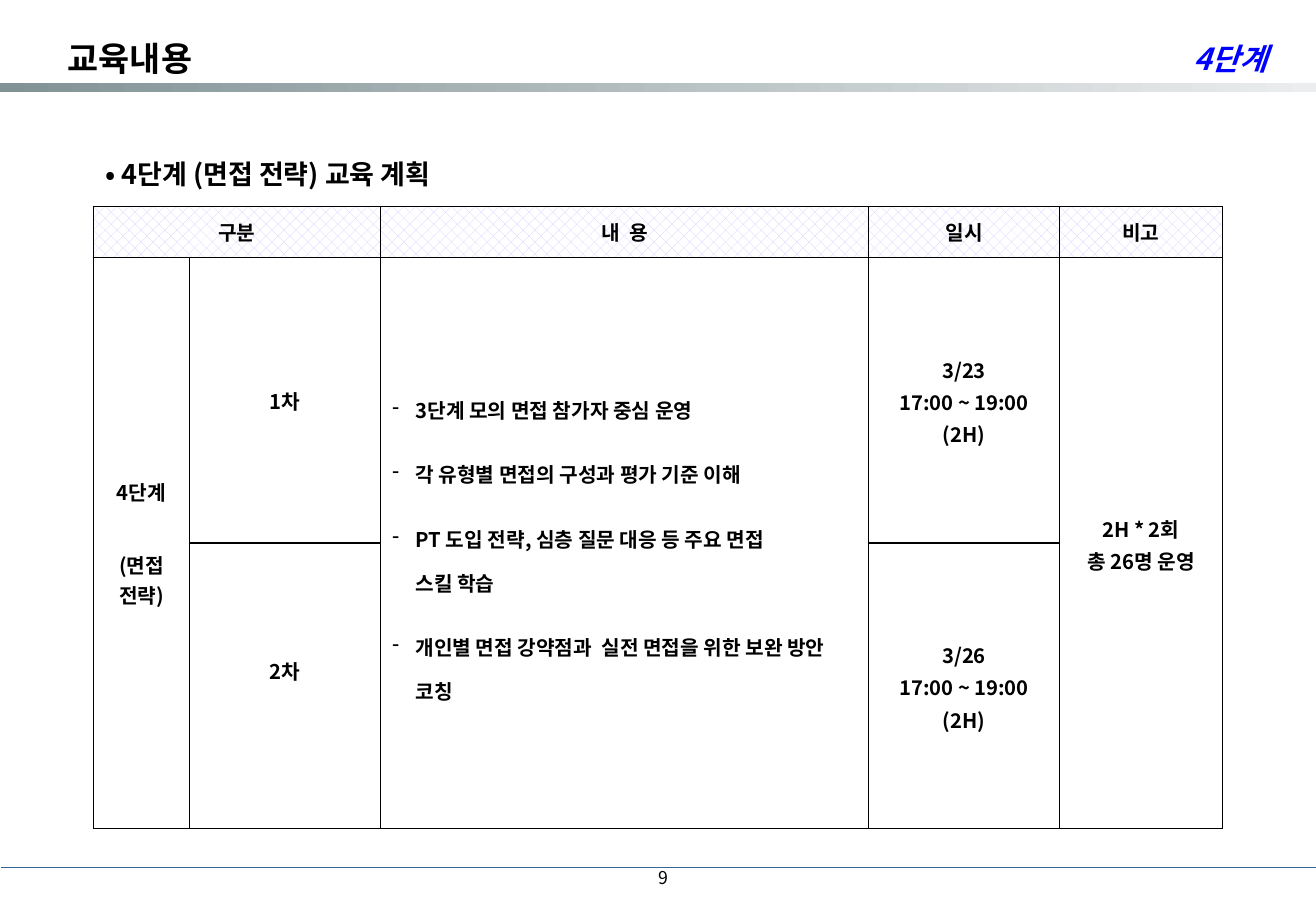
import pptx
import pptx.util
import pptx.dml.color
import pptx.enum.dml
import pptx.enum.shapes
import pptx.enum.text
import pptx.oxml
import pptx.oxml.ns
from dataclasses import dataclass

Inches, Pt = pptx.util.Inches, pptx.util.Pt
ALIGN = pptx.enum.text.PP_ALIGN
MIDDLE = pptx.enum.text.MSO_ANCHOR.MIDDLE


@dataclass(frozen=True)
class Theme:
    font: str = "Noto Sans CJK KR"
    black: str = "000000"
    white: str = "FFFFFF"
    blue: str = "0000FF"
    rule: str = "336699"
    header: str = "CCCCFF"
    bar: tuple = ("819295", "EBEDEE")
    title: float = 20
    stage: float = 18
    heading: float = 16
    body: float = 12
    number: float = 10.5


T = Theme()
SIZE = (10.83, 7.5)
TITLE, STAGE, PAGE = "교육내용", "4단계", "9"
HEADING = "• 4단계 (면접 전략) 교육 계획"
COLS = [0.79, 1.57, 4.02, 1.57, 1.34]
ROWS = [0.42, 2.35, 2.35]
TABLE_AT = (0.77, 1.7)
HEADERS = {0: "구분", 2: "내  용", 3: "일시", 4: "비고"}
STAGE_CELL = "4단계\n\n(면접\n전략)"
ROUNDS = [("1차", "3/23\n17:00 ~ 19:00\n(2H)"), ("2차", "3/26\n17:00 ~ 19:00\n(2H)")]
ROUND_BOTTOM = [0.04, 0.29]
TOPICS = [
    "3단계 모의 면접 참가자 중심 운영",
    "각 유형별 면접의 구성과 평가 기준 이해",
    "PT 도입 전략, 심층 질문 대응 등 주요 면접\n스킬 학습",
    "개인별 면접 강약점과  실전 면접을 위한 보완 방안 코칭",
]
REMARK = "2H * 2회\n총 26명 운영"
MERGES = [((0, 0), (0, 1)), ((1, 0), (2, 0)), ((1, 2), (2, 2)), ((1, 4), (2, 4))]


def rgb(value):
    return pptx.dml.color.RGBColor.from_string(value)


def add_xml(parent, tag, index=None, **attrs):
    el = pptx.oxml.parse_xml(f"<a:{tag} {pptx.oxml.ns.nsdecls('a')}/>")
    for name, value in attrs.items():
        el.set(name, str(value))
    parent.insert(len(parent) if index is None else index, el)
    return el


def write(p, text, size, color=T.black, bold=True, italic=False, align=ALIGN.LEFT, spacing=None):
    p.text = text
    p.alignment = align
    if spacing:
        p.line_spacing = spacing
    for r in p.runs:
        f = r.font
        f.name, f.size, f.bold, f.italic = T.font, Pt(size), bold, italic
        f.color.rgb = rgb(color)
        add_xml(r._r.get_or_add_rPr(), "ea", typeface=T.font)


def add_text(s, box, text, size, margin=0.05, wrap=True, anchor=MIDDLE, **style):
    tf = s.shapes.add_textbox(*map(Inches, box)).text_frame
    tf.word_wrap, tf.vertical_anchor = wrap, anchor
    tf.margin_top = tf.margin_bottom = Inches(margin)
    write(tf.paragraphs[0], text, size, **style)


def format_cell(cell, is_header):
    cell.vertical_anchor = MIDDLE
    cell.margin_left = cell.margin_right = Inches(0.1)
    cell.margin_top = cell.margin_bottom = Inches(0.04)
    if is_header:
        cell.fill.patterned()
        cell.fill.pattern = pptx.enum.dml.MSO_PATTERN.PERCENT_30
        cell.fill.fore_color.rgb, cell.fill.back_color.rgb = rgb(T.header), rgb(T.white)
    else:
        cell.fill.solid()
        cell.fill.fore_color.rgb = rgb(T.white)
    for i, side in enumerate(("lnL", "lnR", "lnT", "lnB")):
        ln = add_xml(cell._tc.get_or_add_tcPr(), side, i, w=Pt(1))
        add_xml(add_xml(ln, "solidFill"), "srgbClr", val=T.black)


def add_frame(s):
    sp = s.shapes.add_shape(pptx.enum.shapes.MSO_SHAPE.RECTANGLE,
                            Inches(-0.01), Inches(0.68), Inches(10.84), Inches(0.08))
    sp.shadow.inherit = False
    sp.line.fill.background()
    sp.fill.gradient()
    sp.fill.gradient_angle = 0
    for i, stop in enumerate(sp.fill.gradient_stops):
        stop.position = i
        stop.color.rgb = rgb(T.bar[i])
    line = s.shapes.add_connector(pptx.enum.shapes.MSO_CONNECTOR.STRAIGHT,
                                  Inches(0.01), Inches(7.14), Inches(SIZE[0]), Inches(7.14))
    line.line.color.rgb, line.line.width = rgb(T.rule), Pt(0.75)
    add_xml(line._element.spPr, "effectLst")


def add_plan(s):
    box = (*TABLE_AT, sum(COLS), sum(ROWS))
    table = s.shapes.add_table(len(ROWS), len(COLS), *map(Inches, box)).table
    table.horz_banding = False
    for column, width in zip(table.columns, COLS):
        column.width = Inches(width)
    for row, height in zip(table.rows, ROWS):
        row.height = Inches(height)
    for i in range(len(ROWS)):
        for j in range(len(COLS)):
            format_cell(table.cell(i, j), i == 0)
    for first, last in MERGES:
        table.cell(*first).merge(table.cell(*last))

    def fill(row, col, text, spacing=None):
        write(table.cell(row, col).text_frame.paragraphs[0], text, T.body,
              align=ALIGN.CENTER, spacing=spacing)

    for col, text in HEADERS.items():
        fill(0, col, text)
    fill(1, 0, STAGE_CELL)
    fill(1, 4, REMARK, 1.1)
    for row, (name, date) in enumerate(ROUNDS, 1):
        fill(row, 1, name)
        fill(row, 3, date, 1.1)
        table.cell(row, 1).margin_bottom = Inches(ROUND_BOTTOM[row - 1])
    tf = table.cell(1, 2).text_frame
    for i, topic in enumerate(TOPICS):
        p = tf.add_paragraph() if i else tf.paragraphs[0]
        write(p, topic, T.body, spacing=1.5)
        p.space_before = Pt(12)
        pPr = p._p.get_or_add_pPr()
        pPr.set("marL", str(Inches(0.19)))
        pPr.set("indent", str(Inches(-0.19)))
        add_xml(pPr, "buChar", char="-")


def main():
    prs = pptx.Presentation()
    prs.slide_width, prs.slide_height = map(Inches, SIZE)
    s = prs.slides.add_slide(prs.slide_layouts[6])
    add_frame(s)
    add_text(s, (3.07, 7.02, 2.53, 0.4), PAGE, T.number, bold=False, align=ALIGN.RIGHT)
    add_plan(s)
    add_text(s, (0.46, 0.23, 5.72, 0.47), TITLE, T.title, margin=0.1, spacing=1.1)
    add_text(s, (6.99, 0.23, 3.54, 0.47), STAGE, T.stage, margin=0.1, spacing=1.1,
             color=T.blue, italic=True, align=ALIGN.RIGHT)
    add_text(s, (0.77, 1.25, 3.39, 0.37), HEADING, T.heading, wrap=False,
             anchor=pptx.enum.text.MSO_ANCHOR.TOP)
    prs.save("out.pptx")


if __name__ == "__main__":
    main()
